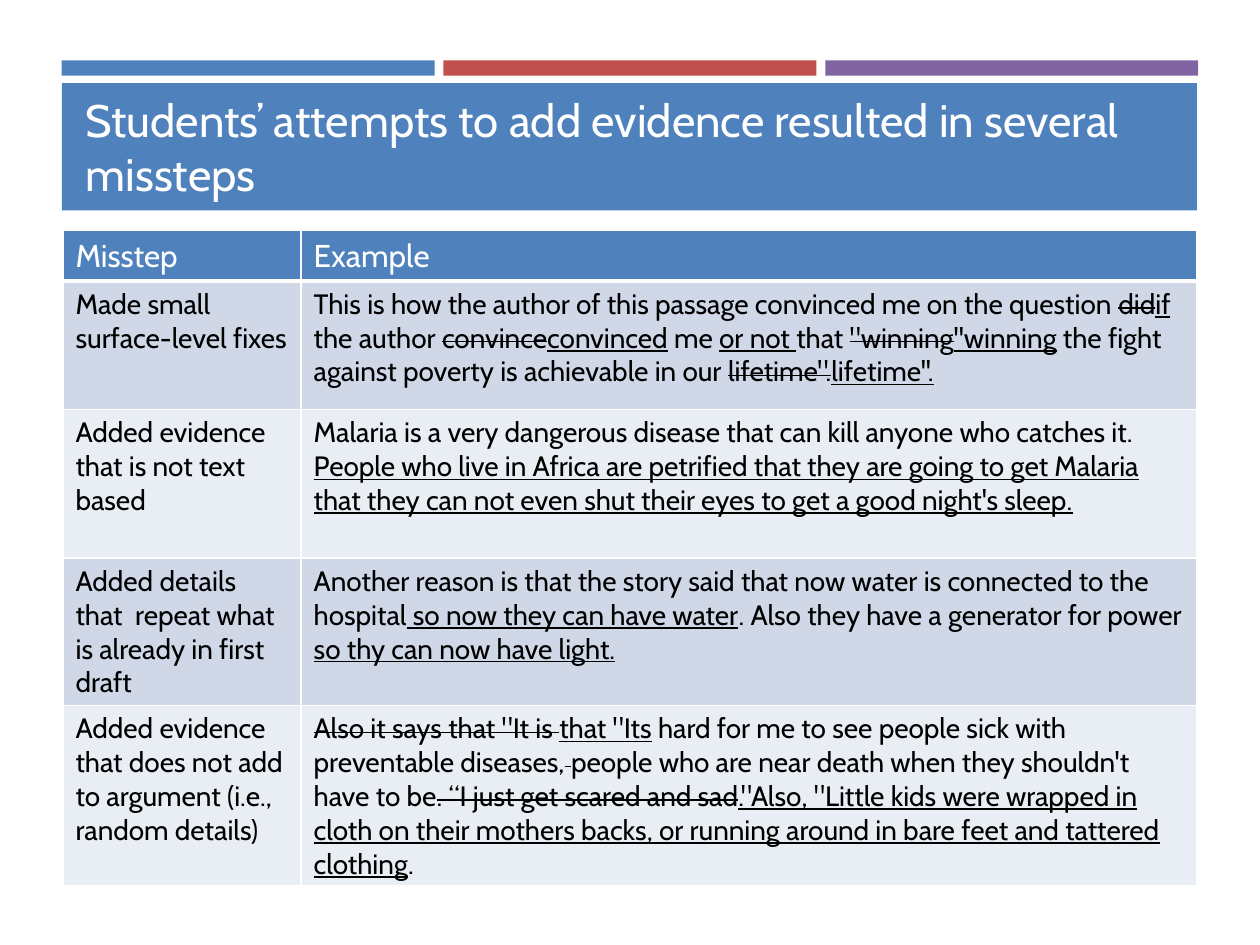
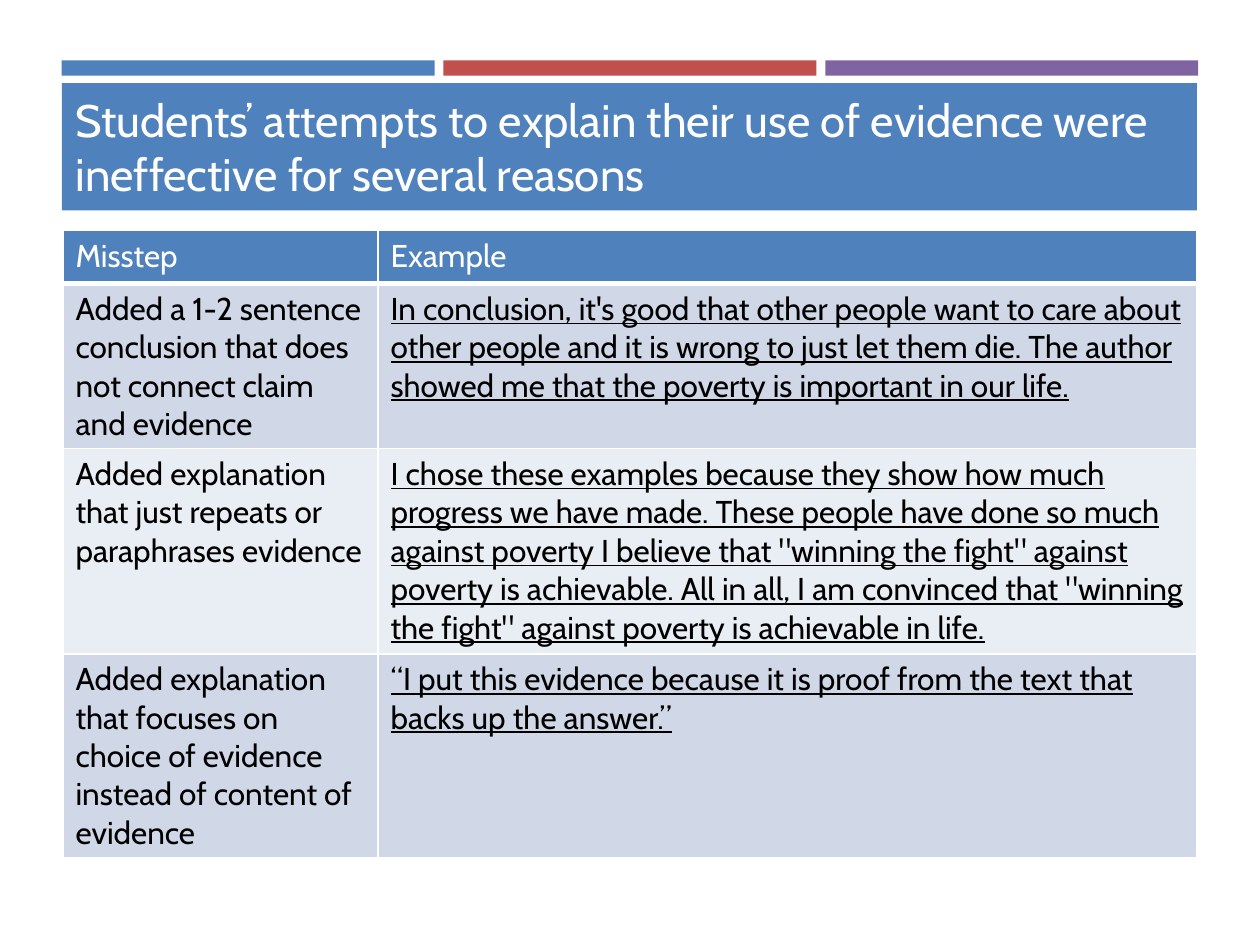
"""Build two slides on students' missteps when adding and explaining evidence."""
from lxml.etree import SubElement
from pptx import Presentation
from pptx.dml.color import RGBColor
from pptx.enum.shapes import MSO_SHAPE as SHAPE
from pptx.enum.text import MSO_ANCHOR as ANCHOR, MSO_AUTO_SIZE as AUTO, PP_ALIGN as ALIGN
from pptx.oxml.ns import qn
from pptx.util import Pt

PX = 9144
FONT = "Cabin"
BLUE = RGBColor(0x4F, 0x81, 0xBD)
RED = RGBColor(0xC0, 0x50, 0x4D)
PURPLE = RGBColor(0x80, 0x64, 0xA2)
WHITE = RGBColor(0xFF, 0xFF, 0xFF)
BLACK = RGBColor(0x00, 0x00, 0x00)
ROW_DARK = RGBColor(0xD0, 0xD8, 0xE8)
ROW_LIGHT = RGBColor(0xE9, 0xED, 0xF4)
PLAIN, UNDER, STRIKE = "plain", "under", "strike"

SLIDES = [
    dict(
        title="Students’ attempts to add evidence resulted in several missteps",
        left=58, width=875, cols=[189, 711], heights=[39, 102, 118, 117, 140], size=16,
        rows=[
            ("Made small surface-level fixes", [
                ("This is how the author of this passage convinced me on the question ", PLAIN),
                ("did", STRIKE), ("if", UNDER), (" the author ", PLAIN),
                ("convince", STRIKE), ("convinced", UNDER), (" me ", PLAIN),
                ("or not ", UNDER), ("that ", PLAIN),
                ('"winning', STRIKE), ("''winning", UNDER),
                (" the fight against poverty is achievable in our ", PLAIN),
                ('lifetime".', STRIKE), ("lifetime''.", UNDER)]),
            ("Added evidence that is not text based", [
                ("Malaria is a very dangerous disease that can kill anyone who catches it. ", PLAIN),
                ("People who live in Africa are petrified that they are going to get Malaria "
                 "that they can not even shut their eyes to get a good night's sleep.", UNDER)]),
            ("Added details that  repeat what is already in first draft", [
                ("Another reason is that the story said that now water is connected "
                 "to the hospital", PLAIN),
                (" so now they can have water", UNDER),
                (". Also they have a generator for power", PLAIN),
                (" so thy can now have light.", UNDER)]),
            ("Added evidence that does not add to argument (i.e., random details)", [
                ('Also it says that "It is ', STRIKE), ('that "Its', UNDER),
                (" hard for me to see people sick with preventable diseases,", PLAIN),
                (" ", STRIKE),
                ("people who are near death when they shouldn't have to be", PLAIN),
                (". “I just get scared and sad", STRIKE),
                ('."Also, "Little kids were wrapped in cloth on their mothers backs, '
                 "or running around in bare feet and tattered clothing", UNDER),
                (".", PLAIN)]),
        ]),
    dict(
        title="Students’ attempts to explain their use of evidence were "
              "ineffective for several reasons",
        left=50, width=883, cols=[250, 650], heights=[42, 131, 163, 162], size=18,
        rows=[
            ("Added a 1-2 sentence conclusion that does not connect claim and evidence", [
                ("In conclusion, it's good that other people want to care about other people "
                 "and it is wrong to just let them die. The author showed me that the poverty "
                 "is important in our life.", UNDER)]),
            ("Added explanation that just repeats or paraphrases evidence", [
                ("I chose these examples because they show how much progress we have made. "
                 "These people have done so much against poverty I believe that "
                 '"winning the fight" against poverty is achievable. All in all, I am convinced '
                 'that "winning the fight" against poverty is achievable in life.', UNDER)]),
            ("Added explanation that focuses on choice of evidence "
             "instead of content of evidence", [
                ("“I put this evidence because it is proof from the text that "
                 "backs up the answer.”", UNDER)]),
        ]),
]


def add_bar(slide, x, y, w, h, color):
    sp = slide.shapes.add_shape(SHAPE.RECTANGLE, x * PX, y * PX, w * PX, h * PX)
    sp.shadow.inherit = False
    sp.fill.solid()
    sp.fill.fore_color.rgb = color
    sp.line.fill.background()


def fill_cell(cell, runs, size, color, fill, bottom):
    tcPr = cell._tc.get_or_add_tcPr()
    for side, weight in (("L", 1), ("R", 1), ("T", 1), ("B", bottom)):
        ln = SubElement(tcPr, qn(f"a:ln{side}"), w=str(Pt(weight)))
        SubElement(SubElement(ln, qn("a:solidFill")), qn("a:srgbClr"), val=str(WHITE))
    cell.fill.solid()
    cell.fill.fore_color.rgb = fill
    p = cell.text_frame.paragraphs[0]
    for text, style in runs:
        r = p.add_run()
        r.text = text
        r.font.name, r.font.size, r.font.bold = FONT, Pt(size), False
        r.font.color.rgb = color
        if style == UNDER:
            r.font.underline = True
        elif style == STRIKE:
            r._r.get_or_add_rPr().set("strike", "sngStrike")


prs = Presentation()
prs.slide_width, prs.slide_height = 1000 * PX, 750 * PX

for data in SLIDES:
    s = prs.slides.add_slide(prs.slide_layouts[5])
    for i, color in enumerate((BLUE, RED, PURPLE)):
        add_bar(s, 49 + i * 303, 48, 296, 12, color)
    add_bar(s, 49, 66, 901, 101, BLUE)

    title = s.shapes.title
    title.element.getparent().append(title.element)
    title.left, title.top = data["left"] * PX, 67 * PX
    title.width, title.height = data["width"] * PX, 98 * PX
    tf = title.text_frame
    tf.text = data["title"]
    tf.word_wrap = True
    tf.auto_size = AUTO.SHAPE_TO_FIT_TEXT
    tf.vertical_anchor = ANCHOR.MIDDLE
    p = tf.paragraphs[0]
    p.alignment = ALIGN.LEFT
    p.font.name, p.font.size = FONT, Pt(26)
    p.font.color.rgb = WHITE

    heights = data["heights"]
    table = s.shapes.add_table(len(heights), 2, 50 * PX, 183 * PX,
                               900 * PX, sum(heights) * PX).table
    for column, width in zip(table.columns, data["cols"]):
        column.width = width * PX
    for row, height in zip(table.rows, heights):
        row.height = height * PX
    for c, heading in enumerate(("Misstep", "Example")):
        fill_cell(table.cell(0, c), [(heading, PLAIN)], 18, WHITE, BLUE, 3)
    for n, (misstep, example) in enumerate(data["rows"], 1):
        fill = ROW_DARK if n % 2 else ROW_LIGHT
        for c, runs in enumerate(([(misstep, PLAIN)], example)):
            fill_cell(table.cell(n, c), runs, data["size"], BLACK, fill, 1)

prs.save("out.pptx")
